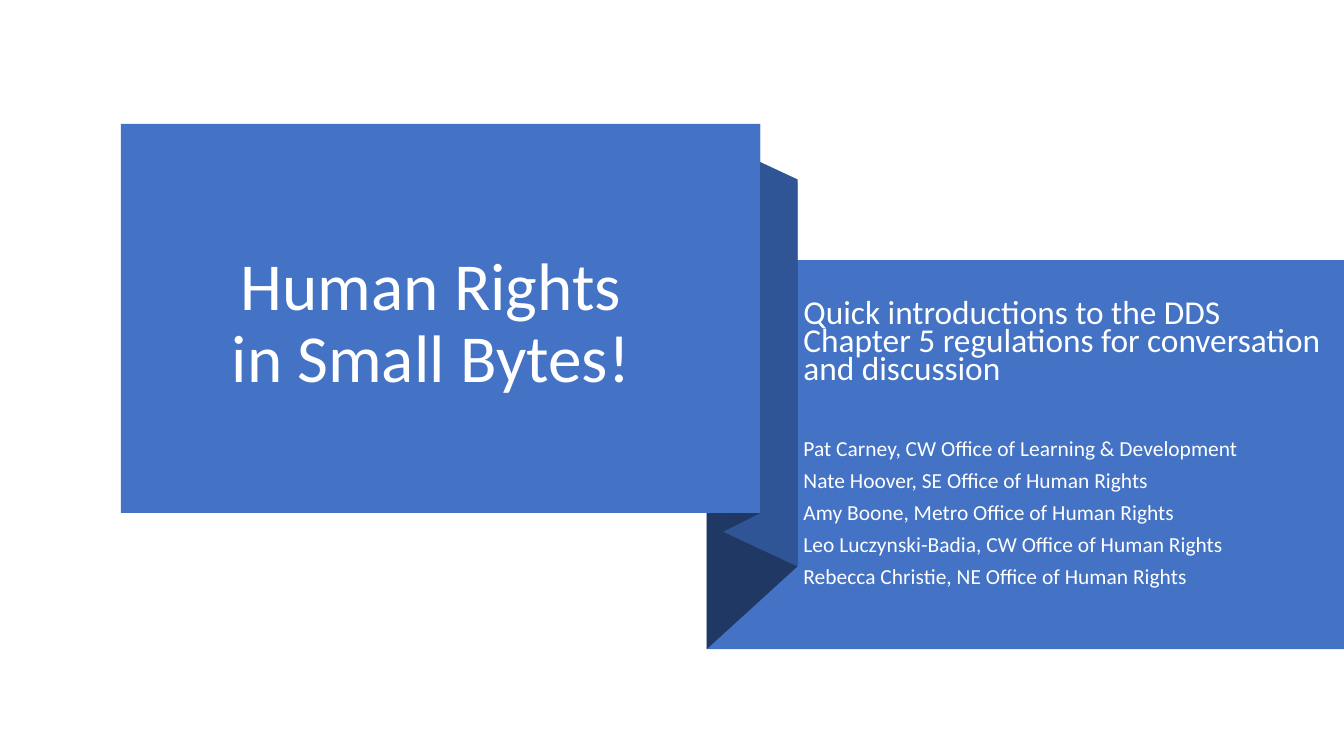
import pptx
import pptx.dml.color
import pptx.enum.shapes
import pptx.enum.text
import pptx.util

Inches = pptx.util.Inches
Pt = pptx.util.Pt
RGBColor = pptx.dml.color.RGBColor

BLUE = RGBColor(0x44, 0x72, 0xC4)
FOLD = RGBColor(0x2F, 0x55, 0x97)
NAVY = RGBColor(0x20, 0x38, 0x64)
WHITE = RGBColor(0xFF, 0xFF, 0xFF)
OFF_WHITE = RGBColor(0xFE, 0xFF, 0xFF)
FONT = "Calibri"

TITLE_LINES = ["Human Rights", "in Small Bytes!"]
INTRO = "Quick introductions to the DDS Chapter 5 regulations for conversation and discussion"
PRESENTERS = [
    "Pat Carney, CW Office of Learning & Development",
    "Nate Hoover, SE Office of Human Rights",
    "Amy Boone, Metro Office of Human Rights",
    "Leo Luczynski-Badia, CW Office of Human Rights",
    "Rebecca Christie, NE Office of Human Rights",
]


def paint(shape, color):
    """Give a shape a flat fill without line or shadow."""
    shape.fill.solid()
    shape.fill.fore_color.rgb = color
    shape.line.fill.background()
    shape.shadow.inherit = False


def add_panel(page, left, top, width, height):
    """Add a plain blue rectangle."""
    panel = page.shapes.add_shape(
        pptx.enum.shapes.MSO_SHAPE.RECTANGLE,
        Inches(left), Inches(top), Inches(width), Inches(height))
    paint(panel, BLUE)


def add_span(para, text, size, color):
    """Add one formatted run to a paragraph."""
    span = para.add_run()
    span.text = text
    span.font.name = FONT
    span.font.size = Pt(size)
    span.font.color.rgb = color


def add_fold(page, left, right, left_top, right_top, height, color):
    """Add a ribbon face with vertical sides of equal height."""
    corners = [(right, right_top + height), (left, left_top + height),
               (left, left_top), (right, right_top)]
    points = [(Inches(x), Inches(y)) for x, y in corners]
    builder = page.shapes.build_freeform(*points[0])
    builder.add_line_segments(points[1:], close=True)
    paint(builder.convert_to_shape(), color)


def add_ribbon(page, left, top):
    """Add the three folded faces that join the two panels."""
    right = left + 0.9
    inner = left + 0.15
    add_fold(page, left, right, top + 1.4, top + 0.58, 3.81, NAVY)
    add_fold(page, inner, right, top + 0.2, top + 0.55, 3.84, FOLD)
    add_fold(page, inner, left + 0.53, top + 0.19, top, 3.86, NAVY)


def add_details(page, left, top, width, height):
    """Add the panel with the introduction and the presenters."""
    add_panel(page, left, top, width, height)
    box = page.shapes.add_textbox(
        Inches(left + 0.86), Inches(top + 0.37), Inches(width - 0.87), Inches(height - 0.82))
    frame = box.text_frame
    frame.word_wrap = True
    rows = [(INTRO, 23.8, 10)]
    rows += [(name, 15.3, 10 if index else 40) for index, name in enumerate(PRESENTERS)]
    for index, (text, size, gap) in enumerate(rows):
        para = frame.add_paragraph() if index else frame.paragraphs[0]
        para.line_spacing = 0.7
        para.space_before = Pt(gap)
        add_span(para, text, size, OFF_WHITE)


def add_title(page, left, top, width, height):
    """Add the front panel and place the title on it."""
    add_panel(page, left, top, width, height)
    title = page.shapes.title
    title.element.getparent().append(title.element)
    title.left, title.top = Inches(left + 0.34), Inches(top + 0.35)
    title.width, title.height = Inches(width - 0.71), Inches(height - 0.72)
    frame = title.text_frame
    frame.word_wrap = True
    frame.auto_size = pptx.enum.text.MSO_AUTO_SIZE.NONE
    frame.vertical_anchor = pptx.enum.text.MSO_ANCHOR.BOTTOM
    frame.margin_right = Inches(0.26)
    frame.margin_bottom = Inches(0.78)
    para = frame.paragraphs[0]
    para.alignment = pptx.enum.text.PP_ALIGN.CENTER
    para.line_spacing = 0.9
    para.space_before = Pt(0)
    for index, line in enumerate(TITLE_LINES):
        if index:
            para.add_line_break()
        add_span(para, line, 48, WHITE)


def main():
    """Build the title slide and save the deck."""
    deck = pptx.Presentation()
    deck.slide_width, deck.slide_height = Inches(13.33), Inches(7.5)
    page = deck.slides.add_slide(deck.slide_layouts.get_by_name("Title Only"))
    add_details(page, 7.01, 2.58, 6.32, 3.86)
    add_ribbon(page, 7.01, 1.23)
    add_title(page, 1.2, 1.23, 6.34, 3.86)
    deck.save("out.pptx")


if __name__ == "__main__":
    main()
